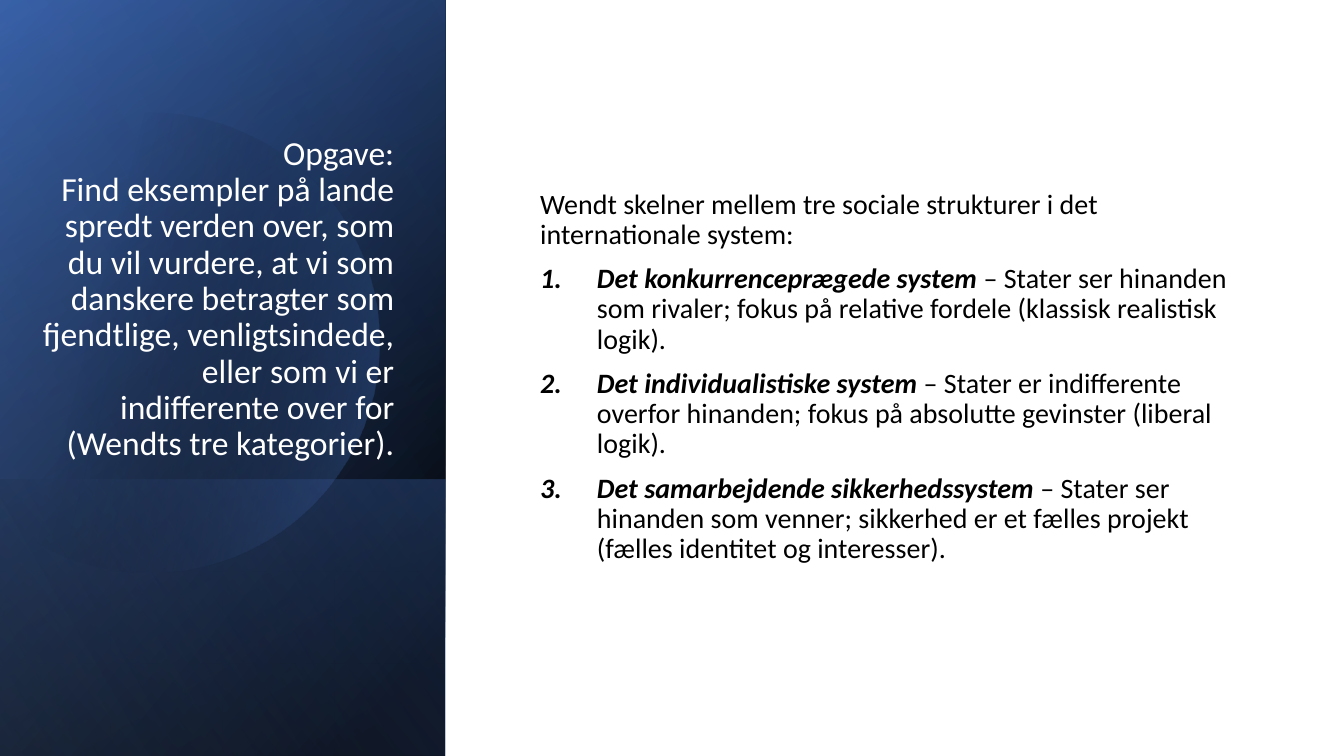
import math
from dataclasses import dataclass

import pptx
import pptx.dml.color
import pptx.enum.shapes
import pptx.enum.text
import pptx.oxml.ns
import pptx.util
from lxml import etree

Cm = pptx.util.Cm
Pt = pptx.util.Pt
qn = pptx.oxml.ns.qn


@dataclass(frozen=True)
class Theme:
    font: str = "Calibri"
    title_size: int = 24
    body_size: int = 20
    line_spacing: float = 0.9
    paragraph_gap: int = 10
    white: str = "FFFFFF"
    black: str = "000000"
    navy: str = "2F5597"
    blue: str = "4472C4"
    pale: str = "8FAADC"


T = Theme()
SLIDE_W, SLIDE_H = 33.87, 19.05
PANEL_W = 11.22
FOOT_H = 6.96
NUMBER_INDENT = 1.43

TITLE = [
    "Opgave:",
    "Find eksempler på lande spredt verden over, som du vil vurdere, at vi som "
    "danskere betragter som fjendtlige, venligtsindede, eller som vi er "
    "indifferente over for (Wendts tre kategorier).",
]
INTRO = "Wendt skelner mellem tre sociale strukturer i det internationale system:"
SYSTEMS = [
    ("Det konkurrenceprægede system ",
     "– Stater ser hinanden som rivaler; fokus på relative fordele "
     "(klassisk realistisk logik)."),
    ("Det individualistiske system ",
     "– Stater er indifferente overfor hinanden; fokus på absolutte gevinster "
     "(liberal logik)."),
    ("Det samarbejdende sikkerhedssystem ",
     "– Stater ser hinanden som venner; sikkerhed er et fælles projekt "
     "(fælles identitet og interesser)."),
]


def rgb(color):
    return pptx.dml.color.RGBColor.from_string(color)


def add_rect(s, left, top, width, height):
    sp = s.shapes.add_shape(
        pptx.enum.shapes.MSO_SHAPE.RECTANGLE,
        Cm(left), Cm(top), Cm(width), Cm(height))
    sp.shadow.inherit = False
    sp.line.fill.background()
    return sp


def fill_gradient(sp, angle, stops):
    sp.fill.gradient()
    sp.fill.gradient_angle = 360 - angle
    for stop, (position, color, _) in zip(sp.fill.gradient_stops, stops):
        stop.position = position / 100
        stop.color.rgb = rgb(color)
    for clr, (_, _, opacity) in zip(sp.element.iter(qn("a:srgbClr")), stops):
        if opacity < 100:
            etree.SubElement(clr, qn("a:alpha"), val=str(opacity * 1000))


def add_panel(s, top, height, angle, *stops):
    shift = (height - PANEL_W) / 2
    sp = add_rect(s, -shift, top + shift, height, PANEL_W)
    sp.rotation = 90
    sp.element.spPr.xfrm.set("flipH", "1")
    fill_gradient(sp, angle, stops)


def add_cut_circle(s, cx, cy, radius, angle, *stops):
    limit = math.acos(-cx / radius)
    steps = 120
    turns = [limit * (2 * i / steps - 1) for i in range(steps + 1)]
    points = [(Cm(cx + radius * math.cos(a)), Cm(cy + radius * math.sin(a)))
              for a in turns]
    builder = s.shapes.build_freeform(*points[0])
    builder.add_line_segments(points[1:], close=True)
    sp = builder.convert_to_shape()
    sp.shadow.inherit = False
    sp.line.fill.background()
    fill_gradient(sp, angle, stops)


def place_text(sp, left, top, width, height, anchor):
    sp.left, sp.top, sp.width, sp.height = map(Cm, (left, top, width, height))
    sp.element.getparent().append(sp.element)
    tf = sp.text_frame
    tf.word_wrap = True
    tf.auto_size = pptx.enum.text.MSO_AUTO_SIZE.NONE
    tf.vertical_anchor = anchor
    return tf


def add_run(p, text, size, color, strong=False):
    r = p.add_run()
    r.text = text
    r.font.name = T.font
    r.font.size = Pt(size)
    r.font.bold = r.font.italic = strong
    r.font.color.rgb = rgb(color)


def format_paragraph(p, align, gap=0):
    p.alignment = align
    p.line_spacing = T.line_spacing
    p.space_before = Pt(gap)


def set_marker(p, numbered):
    pPr = p._p.get_or_add_pPr()
    indent = Cm(NUMBER_INDENT) if numbered else 0
    pPr.set("marL", str(indent))
    pPr.set("indent", str(-indent))
    if numbered:
        etree.SubElement(pPr, qn("a:buFont"), typeface=T.font)
        etree.SubElement(pPr, qn("a:buAutoNum"), type="arabicPeriod")
    else:
        etree.SubElement(pPr, qn("a:buNone"))


def write_title(sp):
    tf = place_text(sp, 0.69, 1.63, 9.5, 10.16,
                    pptx.enum.text.MSO_ANCHOR.BOTTOM)
    p = tf.paragraphs[0]
    format_paragraph(p, pptx.enum.text.PP_ALIGN.RIGHT)
    for i, line in enumerate(TITLE):
        if i:
            p.add_line_break()
        add_run(p, line, T.title_size, T.white)


def write_body(sp):
    tf = place_text(sp, 13.36, 1.8, 18.21, 15.42,
                    pptx.enum.text.MSO_ANCHOR.MIDDLE)
    left = pptx.enum.text.PP_ALIGN.LEFT
    p = tf.paragraphs[0]
    set_marker(p, False)
    format_paragraph(p, left)
    add_run(p, INTRO, T.body_size, T.black)
    for name, description in SYSTEMS:
        p = tf.add_paragraph()
        set_marker(p, True)
        format_paragraph(p, left, T.paragraph_gap)
        add_run(p, name, T.body_size, T.black, strong=True)
        add_run(p, description, T.body_size, T.black)


def main():
    prs = pptx.Presentation()
    prs.slide_width, prs.slide_height = Cm(SLIDE_W), Cm(SLIDE_H)
    s = prs.slides.add_slide(prs.slide_layouts[1])
    title, body = s.placeholders

    backdrop = add_rect(s, 0, 0, SLIDE_W, SLIDE_H)
    backdrop.fill.solid()
    backdrop.fill.fore_color.rgb = rgb(T.white)
    add_panel(s, 0, SLIDE_H, 50, (8, T.black, 100), (100, T.navy, 100))
    add_panel(s, 0, SLIDE_H, 30, (0, T.black, 0), (99, T.blue, 46))
    add_panel(s, SLIDE_H - FOOT_H, FOOT_H, 130,
              (2, T.blue, 29), (100, T.black, 30))
    add_cut_circle(s, 3.78, 8.64, 5.79, 14, (29, T.black, 0), (100, T.blue, 43))
    add_panel(s, 0, SLIDE_H, 120, (0, T.black, 0), (99, T.pale, 11))

    write_title(title)
    write_body(body)
    prs.save("out.pptx")


if __name__ == "__main__":
    main()
